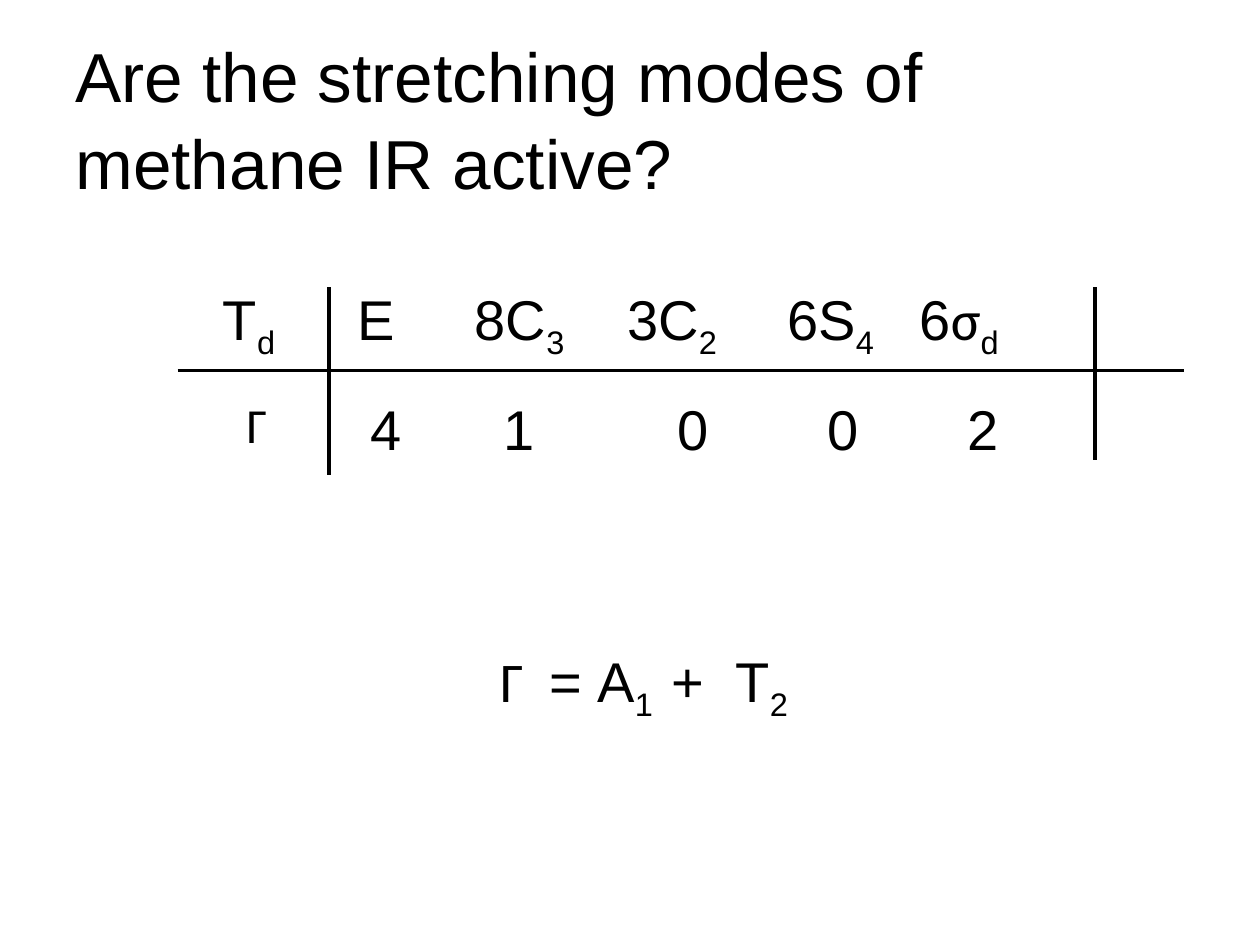
from dataclasses import dataclass

from lxml import etree
from pptx import Presentation
from pptx.dml.color import RGBColor
from pptx.enum.shapes import MSO_CONNECTOR
from pptx.enum.text import MSO_ANCHOR, MSO_AUTO_SIZE, PP_ALIGN
from pptx.oxml.ns import qn
from pptx.util import Inches, Pt

STRAIGHT = MSO_CONNECTOR.STRAIGHT
MIDDLE = MSO_ANCHOR.MIDDLE
LEFT = PP_ALIGN.LEFT
FIXED = MSO_AUTO_SIZE.NONE
GROW = MSO_AUTO_SIZE.SHAPE_TO_FIT_TEXT


@dataclass(frozen=True)
class Theme:
    ink: RGBColor = RGBColor(0, 0, 0)
    latin: str = "Arial"
    greek: str = "Calibri"
    title: float = 39.6
    text: float = 32
    label: float = 28
    rule: float = 2
    subscript: int = -25000


@dataclass(frozen=True)
class Term:
    """A symbol with an optional subscript, starting at x inches."""
    x: float
    symbol: str
    sub: str = ""


@dataclass(frozen=True)
class Row:
    left: float
    top: float
    width: float
    height: float
    size: float
    terms: tuple[Term, ...]


@dataclass(frozen=True)
class Rule:
    x1: float
    y1: float
    x2: float
    y2: float


THEME = Theme()
INSET = 0.1  # text box side margin, in inches

ROWS = (
    # Symmetry operations
    Row(1.67, 2.21, 6.57, 0.64, THEME.text, (
        Term(1.77, "T", "d"), Term(2.84, "E"), Term(3.77, "8C", "3"),
        Term(4.98, "3C", "2"), Term(6.25, "6S", "4"), Term(7.3, "6σ", "d"))),
    # Representation label
    Row(1.86, 3.08, 0.37, 0.57, THEME.label, (Term(1.96, "Γ"),)),
    # Characters
    Row(2.84, 3.08, 5.27, 0.64, THEME.text, (
        Term(2.94, "4"), Term(4, "1"), Term(5.38, "0"),
        Term(6.57, "0"), Term(7.68, "2"))),
    # Reduced representation
    Row(3.87, 5.08, 2.55, 0.64, THEME.text, (
        Term(3.97, "Γ"), Term(4.36, "= A", "1"), Term(5.33, "+"),
        Term(5.84, "T", "2"))),
)

RULES = (
    Rule(1.41, 2.94, 9.4, 2.94),
    Rule(2.61, 2.28, 2.61, 3.77),
    Rule(8.69, 2.28, 8.69, 3.65),
)


def add_span(para, text: str, size: float, sub: bool = False) -> None:
    span = para.add_run()
    span.text = text
    is_greek = any("Α" <= letter <= "ω" for letter in text)
    look = {"size": Pt(size), "name": THEME.greek if is_greek else THEME.latin}
    for name, value in look.items():
        setattr(span.font, name, value)
    span.font.color.rgb = THEME.ink
    if sub:
        span.font._element.set("baseline", str(THEME.subscript))


def add_tab_stops(para, positions: list[float]) -> None:
    tabs = etree.SubElement(para._p.get_or_add_pPr(), qn("a:tabLst"))
    for position in positions:
        etree.SubElement(tabs, qn("a:tab"), pos=str(Inches(position)), algn="l")


def add_row(page, row: Row) -> None:
    box = page.shapes.add_textbox(Inches(row.left), Inches(row.top),
                                  Inches(row.width), Inches(row.height))
    for name, value in {"word_wrap": True, "auto_size": GROW}.items():
        setattr(box.text_frame, name, value)
    para = box.text_frame.paragraphs[0]
    if len(row.terms) > 1:
        add_tab_stops(para, [term.x - row.left - INSET for term in row.terms[1:]])
    for index, term in enumerate(row.terms):
        if index:
            add_span(para, "\t", row.size)
        # Greek letters take their own font
        coefficient, letter = term.symbol[:-1], term.symbol[-1]
        if coefficient:
            add_span(para, coefficient, row.size)
        add_span(para, letter, row.size)
        if term.sub:
            add_span(para, term.sub, row.size, sub=True)


def add_rule(page, rule: Rule) -> None:
    line = page.shapes.add_connector(STRAIGHT, Inches(rule.x1), Inches(rule.y1),
                                     Inches(rule.x2), Inches(rule.y2))
    line.line.color.rgb = THEME.ink
    line.line.width = Pt(THEME.rule)
    etree.SubElement(line._element.spPr, qn("a:effectLst"))


def add_title(page, text: str) -> None:
    title = page.shapes.title
    place = {"left": 0.5, "top": 0.3, "width": 9, "height": 1.25}
    for name, value in place.items():
        setattr(title, name, Inches(value))
    frame = title.text_frame
    look = {"word_wrap": True, "auto_size": FIXED, "vertical_anchor": MIDDLE}
    for name, value in look.items():
        setattr(frame, name, value)
    para = frame.paragraphs[0]
    para.alignment = LEFT
    para.line_spacing = 1.04
    add_span(para, text, THEME.title)


def main() -> None:
    deck = Presentation()
    deck.slide_width, deck.slide_height = Inches(10), Inches(7.5)
    page = deck.slides.add_slide(deck.slide_layouts[5])

    add_title(page, "Are the stretching modes of methane IR active?")
    # Character table and its reduction
    for rule in RULES:
        add_rule(page, rule)
    for row in ROWS:
        add_row(page, row)

    deck.save("out.pptx")


if __name__ == "__main__":
    main()
